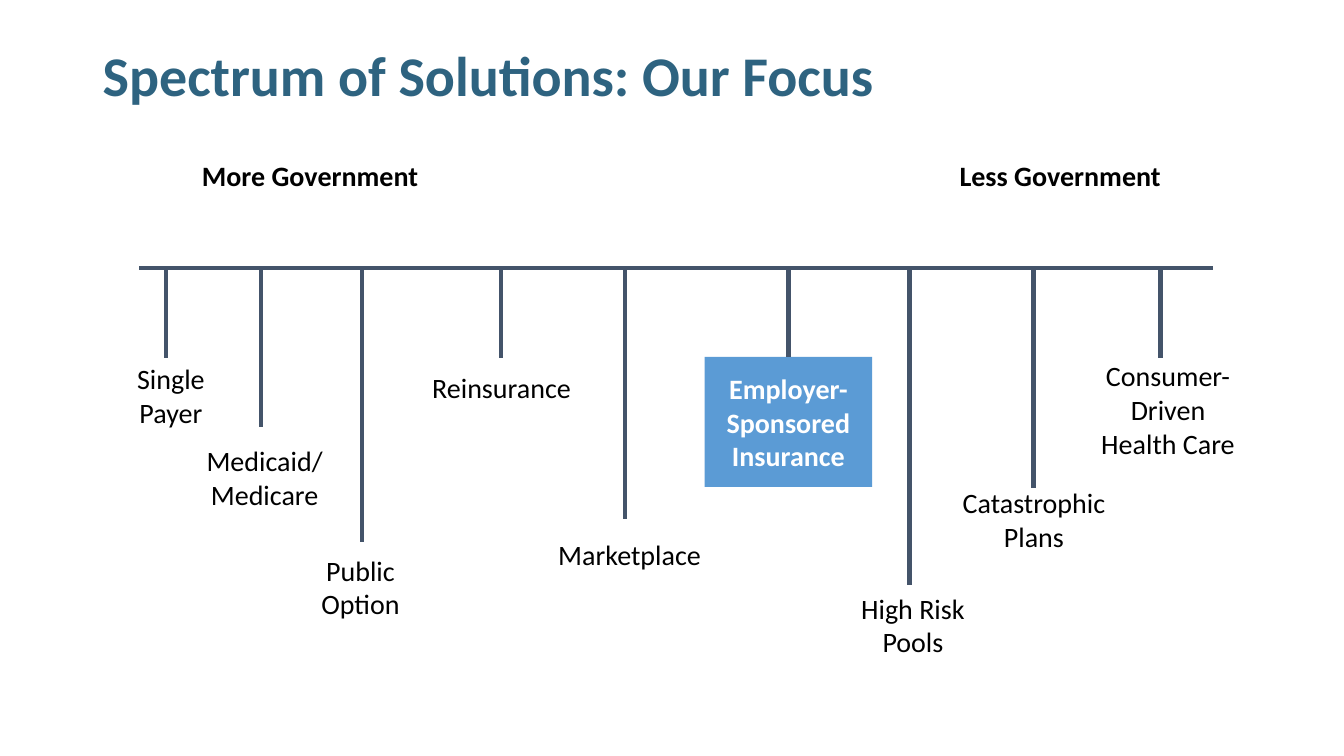
from lxml import etree
from pptx import Presentation
from pptx import util as u
from pptx.dml.color import RGBColor
from pptx.enum import shapes, text
from pptx.oxml.ns import qn

COLORS = {"title": "2E6380", "line": "44546A", "focus": "5B9BD5",
          "white": "FFFFFF", "black": "000000"}


class SpectrumSlide:
    font = "Calibri"
    line_width = 3

    def __init__(self, slide):
        self.shapes = slide.shapes

    def color(self, name):
        return RGBColor.from_string(COLORS[name])

    def set_words(self, shape, words, size, color, bold, align):
        frame = shape.text_frame
        frame.text = words
        frame.word_wrap = True
        frame.vertical_anchor = text.MSO_ANCHOR.MIDDLE
        paragraph = frame.paragraphs[0]
        paragraph.alignment = align
        font = paragraph.runs[0].font
        font.name, font.size, font.bold = self.font, u.Pt(size), bold
        font.color.rgb = self.color(color)
        return paragraph

    def label(self, words, box, size=20, color="black", bold=False,
              align=text.PP_ALIGN.CENTER):
        area = self.shapes.add_textbox(*map(u.Inches, box))
        return self.set_words(area, words, size, color, bold, align)

    def focus_box(self, words, box):
        focus = self.shapes.add_shape(
            shapes.MSO_SHAPE.RECTANGLE, *map(u.Inches, box))
        focus.shadow.inherit = False
        focus.fill.solid()
        focus.fill.fore_color.rgb = self.color("focus")
        focus.line.fill.background()
        self.set_words(focus, words, 20, "white", True, text.PP_ALIGN.CENTER)
        return focus

    def line(self, x1, y1, x2, y2):
        rule = self.shapes.add_connector(
            shapes.MSO_CONNECTOR.STRAIGHT, *map(u.Inches, (x1, y1, x2, y2)))
        rule.line.color.rgb = self.color("line")
        rule.line.width = u.Pt(self.line_width)
        etree.SubElement(rule._element.spPr, qn("a:effectLst"))
        return rule


def main():
    prs = Presentation()
    prs.slide_width, prs.slide_height = u.Inches(13.33), u.Inches(7.5)
    spectrum = SpectrumSlide(prs.slides.add_slide(prs.slide_layouts[6]))

    # Title
    title = spectrum.label("Spectrum of Solutions: Our Focus",
                           (0.92, 0.4, 11.5, 0.75), 40, "title", True,
                           text.PP_ALIGN.LEFT)
    title.line_spacing = 0.9

    # Ends of the spectrum
    for end, left in (("More Government", 1.84), ("Less Government", 9.28)):
        spectrum.label(end, (left, 1.07, 2.47, 1.33), bold=True)

    # Axis
    axis_y = 2.66
    spectrum.line(1.38, axis_y, 12.03, axis_y)

    # Solutions: words, stem x, stem end, label box
    solutions = [
        ("Single Payer", 1.65, 3.55, (0.97, 3.26, 1.45, 1.33)),
        ("Medicaid/Medicare", 2.59, 4.24, (1.84, 4.07, 1.57, 1.33)),
        ("Public Option", 3.59, 5.38, (2.74, 5.17, 1.67, 1.3)),
        ("Reinsurance", 4.97, 3.55, (4.14, 3.19, 1.67, 1.3)),
        ("Marketplace", 6.2, 5.15, (5.41, 4.85, 1.67, 1.3)),
        ("High Risk Pools", 9.02, 5.8, (8.22, 5.55, 1.67, 1.3)),
        ("Catastrophic Plans", 10.25, 4.84, (9.42, 4.5, 1.67, 1.3)),
        ("Consumer-Driven Health Care", 11.51, 3.55, (10.75, 3.41, 1.67, 1.3)),
    ]
    for words, stem_x, stem_end, box in solutions:
        spectrum.line(stem_x, axis_y, stem_x, stem_end)
        spectrum.label(words, box)

    # Highlighted solution, joined to the axis
    employer = spectrum.focus_box("Employer- Sponsored Insurance",
                                  (6.99, 3.54, 1.66, 1.29))
    employer_stem = spectrum.line(7.82, axis_y, 7.82, 3.54)
    employer_stem.end_connect(employer, 0)

    prs.save("out.pptx")


if __name__ == "__main__":
    main()
